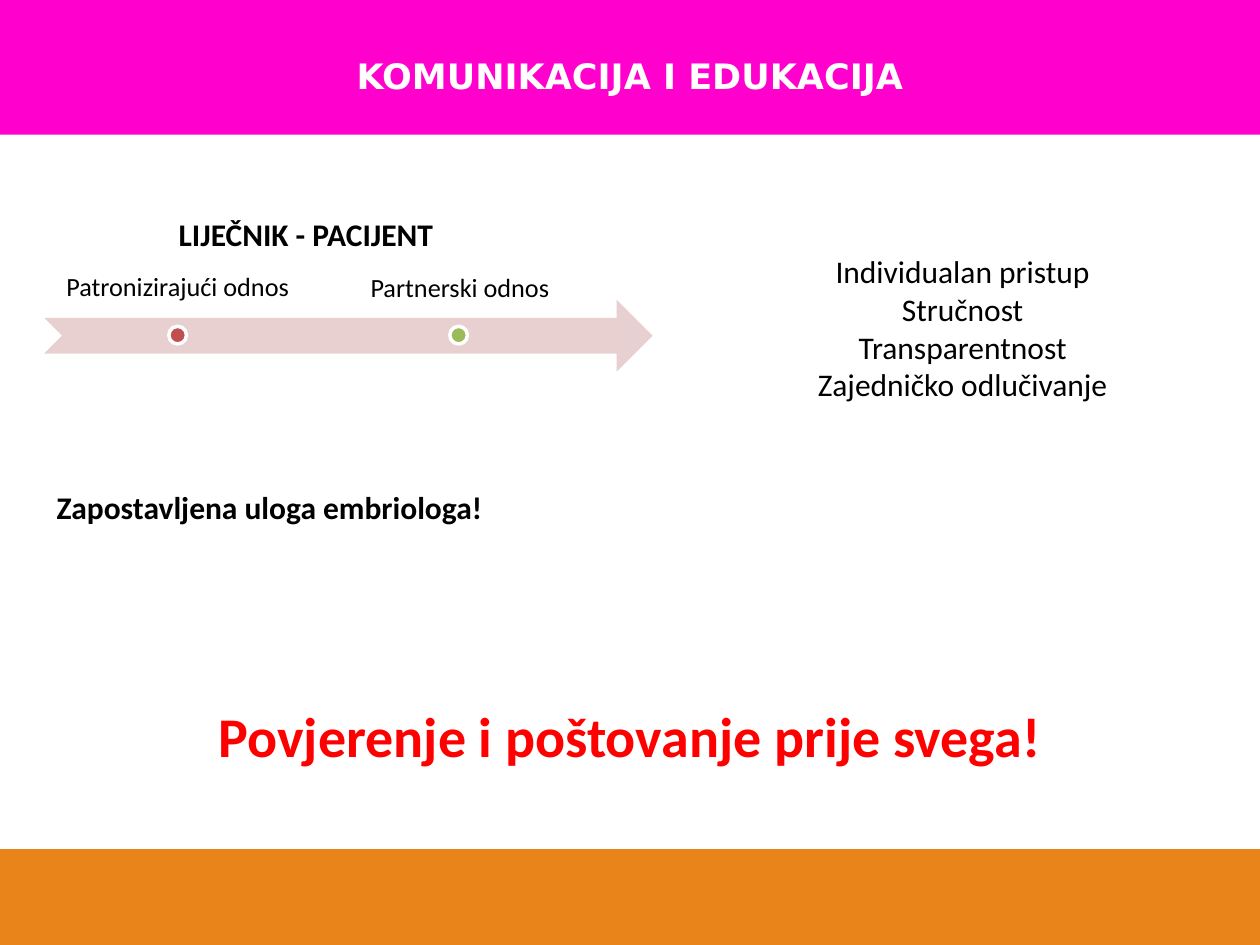
from pptx import Presentation
from pptx.dml.color import RGBColor
from pptx.enum.shapes import MSO_SHAPE
from pptx.enum.text import MSO_ANCHOR, MSO_AUTO_SIZE, PP_ALIGN
from pptx.util import Inches, Pt

COLORS = {
    "header": "FF00CD",
    "footer": "E9841B",
    "arrow": "E8D0D0",
    "patronizing": "C0504D",
    "partner": "9BBB59",
    "white": "FFFFFF",
    "black": "000000",
    "motto": "FF0000",
}


def color(name):
    return RGBColor.from_string(COLORS[name])


def add_filled(slide, preset, box, fill, outline=None):
    """Add a filled preset shape, with a 2 pt outline if a colour is given."""
    figure = slide.shapes.add_shape(preset, *map(Inches, box))
    figure.shadow.inherit = False
    figure.fill.solid()
    figure.fill.fore_color.rgb = color(fill)
    if outline:
        figure.line.color.rgb = color(outline)
        figure.line.width = Pt(2)
    else:
        figure.line.fill.background()


def add_text(slide, box, lines, size=18, font="Calibri", ink="black", bold=False,
             align=PP_ALIGN.LEFT, spacing=None, grow=True):
    """Add a text box with one paragraph per line and return its frame."""
    frame = slide.shapes.add_textbox(*map(Inches, box)).text_frame
    frame.word_wrap = True
    frame.auto_size = MSO_AUTO_SIZE.SHAPE_TO_FIT_TEXT if grow else MSO_AUTO_SIZE.NONE
    for index, line in enumerate(lines):
        paragraph = frame.add_paragraph() if index else frame.paragraphs[0]
        paragraph.alignment = align
        if spacing:
            paragraph.line_spacing = spacing
        run = paragraph.add_run()
        run.text = line
        run.font.name = font
        run.font.size = Pt(size)
        run.font.bold = bold
        run.font.color.rgb = color(ink)
    return frame


def add_stage(slide, label, label_left, label_top, anchor, dot_left, dot_fill):
    """Add one stage of the relationship: its label and its dot on the arrow."""
    frame = add_text(slide, (label_left, label_top, 2.12, 0.57), [label], size=15,
                     align=PP_ALIGN.CENTER, spacing=0.9, grow=False)
    frame.vertical_anchor = anchor
    frame.margin_left = frame.margin_right = Inches(0.12)
    frame.margin_top = frame.margin_bottom = Inches(0.12)
    add_filled(slide, MSO_SHAPE.OVAL, (dot_left, 2.59, 0.14, 0.14), dot_fill, "white")


def main():
    deck = Presentation()
    deck.slide_width, deck.slide_height = Inches(10), Inches(7.5)
    slide = deck.slides.add_slide(deck.slide_layouts[6])

    # Header and footer bands
    add_filled(slide, MSO_SHAPE.RECTANGLE, (0, 0, 10, 1.07), "header")
    add_filled(slide, MSO_SHAPE.RECTANGLE, (0, 6.74, 10, 0.76), "footer")

    # Title, set in the lower part of the header
    title = add_text(slide, (0.5, 0.05, 9, 1), ["KOMUNIKACIJA I EDUKACIJA"], size=20,
                     font="DejaVu Sans", ink="white", bold=True,
                     align=PP_ALIGN.CENTER, grow=False)
    title.margin_top = Inches(0.38)

    # Doctor and patient: from a patronizing to a partner relationship
    add_text(slide, (1.32, 1.51, 2.76, 0.56), ["LIJEČNIK - PACIJENT"],
             bold=True, spacing=1.5)
    add_filled(slide, MSO_SHAPE.NOTCHED_RIGHT_ARROW, (0.35, 2.38, 4.83, 0.57), "arrow")
    add_stage(slide, "Patronizirajući odnos", 0.35, 1.95, MSO_ANCHOR.BOTTOM,
              1.34, "patronizing")
    add_stage(slide, "Partnerski odnos", 2.59, 2.06, MSO_ANCHOR.TOP, 3.57, "partner")

    # Principles of the approach
    principles = ["Individualan pristup", "Stručnost", "Transparentnost",
                  "Zajedničko odlučivanje"]
    add_text(slide, (5.63, 1.95, 4.02, 1.31), principles, align=PP_ALIGN.CENTER)

    # Remark and closing motto
    add_text(slide, (0.35, 3.67, 9.15, 0.51), ["Zapostavljena uloga embriologa!"],
             bold=True, spacing=1.5)
    add_text(slide, (1.59, 5.25, 6.82, 0.83), ["Povjerenje i poštovanje prije svega!"],
             size=32, ink="motto", bold=True, align=PP_ALIGN.CENTER, spacing=1.5)

    deck.save("out.pptx")


if __name__ == "__main__":
    main()
